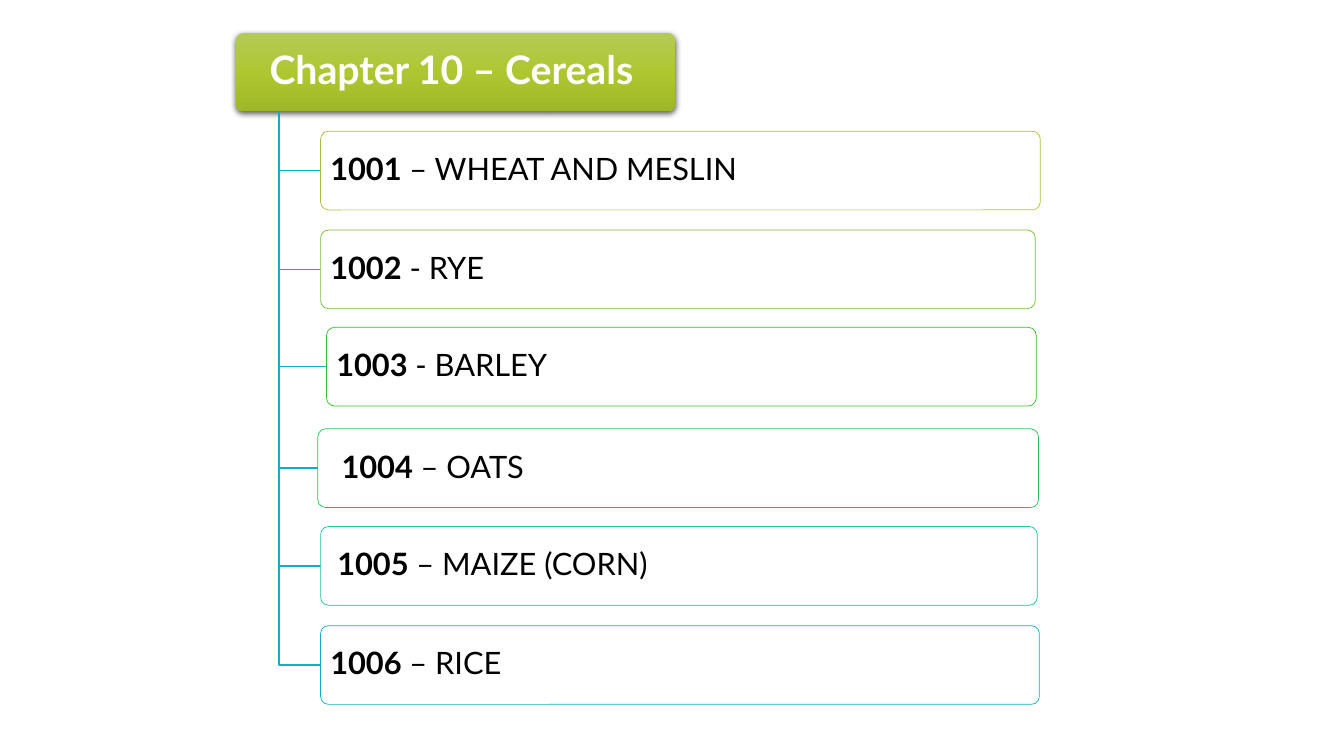
from lxml import etree
from pptx import Presentation
from pptx.dml.color import RGBColor
from pptx.enum import shapes as kinds
from pptx.enum import text as txt
from pptx.oxml import parse_xml
from pptx.util import Pt

WHITE = RGBColor(0xFF, 0xFF, 0xFF)
BLACK = RGBColor(0, 0, 0)
TEAL = RGBColor(0x11, 0xAE, 0xC7)
LIME = [RGBColor(0xB4, 0xCA, 0x58), RGBColor(0xAE, 0xC7, 0x31), RGBColor(0x9E, 0xB7, 0x26)]
NS = 'xmlns:a="http://schemas.openxmlformats.org/drawingml/2006/main"'
SHADE = (f'<a:outerShdw {NS} blurRad="57150" dist="19050" dir="5400000" algn="ctr" rotWithShape="0">'
         '<a:srgbClr val="000000"><a:alpha val="63000"/></a:srgbClr></a:outerShdw>')

HIGH = 56.2
STEM = (199.4, 79.9)

# code, name, left, top, width, indent, outline
ROWS = [
    ("1001", " – WHEAT AND MESLIN", 229, 93.7, 514.1, 0, RGBColor(0xA9, 0xC0, 0x38)),
    ("1002", " - RYE", 229, 164.3, 510.5, 0, RGBColor(0x70, 0xC2, 0x2F)),
    ("1003", " - BARLEY", 233.3, 233.8, 506.9, 0, RGBColor(0x2E, 0xC4, 0x27)),
    ("1004", " – OATS", 227, 306.3, 514.8, 10, RGBColor(0x1F, 0xC5, 0x5A)),
    ("1005", " – MAIZE (CORN)", 229, 376.1, 511.9, 5, RGBColor(0x18, 0xC6, 0x9A)),
    ("1006", " – RICE", 229, 446.9, 513.4, 0, TEAL),
]


def add_box(left, top, width, runs, size, color, align, pad):
    """Add a rounded box whose text is a list of (words, bold) runs."""
    box = slide.shapes.add_shape(kinds.MSO_SHAPE.ROUNDED_RECTANGLE,
                                 Pt(left), Pt(top), Pt(width), Pt(HIGH))
    box.adjustments[0] = 0.1
    box.shadow.inherit = False
    frame = box.text_frame
    look = {"word_wrap": True, "vertical_anchor": txt.MSO_ANCHOR.MIDDLE,
            "margin_left": Pt(pad[0]), "margin_right": Pt(pad[1]),
            "margin_top": Pt(4), "margin_bottom": Pt(4)}
    for key, value in look.items():
        setattr(frame, key, value)
    para = frame.paragraphs[0]
    para.alignment = align
    para.line_spacing = 0.9
    for words, bold in runs:
        run = para.add_run()
        run.text = words
        for key, value in {"name": "Lato", "size": Pt(size), "bold": bold}.items():
            setattr(run.font, key, value)
        run.font.color.rgb = color
    return box


deck = Presentation()
deck.slide_width, deck.slide_height = Pt(960), Pt(540)
slide = deck.slides.add_slide(deck.slide_layouts[6])

# Chapter heading
head = add_box(168.6, 23.4, 313.9, [("Chapter 10 – Cereals", True)], 28, WHITE,
               txt.PP_ALIGN.CENTER, (5.8, 12))
head.line.fill.background()
head.fill.gradient()
head.fill.gradient_angle = 270
stops = head.fill.gradient_stops
for stop, color in zip(stops, (LIME[0], LIME[2])):
    stop.color.rgb = color
stops[0].position, stops[1].position = 0, 1
first = head.element.spPr.find(".//{*}gs")
first.addnext(parse_xml(f'<a:gs {NS} pos="50000"><a:srgbClr val="{LIME[1]}"/></a:gs>'))
head.element.spPr.find("{*}effectLst").append(etree.fromstring(SHADE))

# Headings of the chapter, each hung from the stem
for code, name, left, top, width, indent, color in ROWS:
    mid = top + HIGH / 2
    pen = slide.shapes.build_freeform(Pt(STEM[0]), Pt(STEM[1]))
    pen.add_line_segments([(Pt(STEM[0]), Pt(mid)), (Pt(left), Pt(mid))], close=False)
    elbow = pen.convert_to_shape()
    elbow.shadow.inherit = False
    elbow.fill.background()
    elbow.line.color.rgb = TEAL
    elbow.line.width = Pt(1)

    box = add_box(left, top, width, [(code, True), (name, False)], 22, BLACK,
                  txt.PP_ALIGN.LEFT, (5.3 + indent, 5.3))
    box.fill.solid()
    box.fill.fore_color.rgb = WHITE
    box.line.color.rgb = color
    box.line.width = Pt(0.5)

deck.save("out.pptx")
